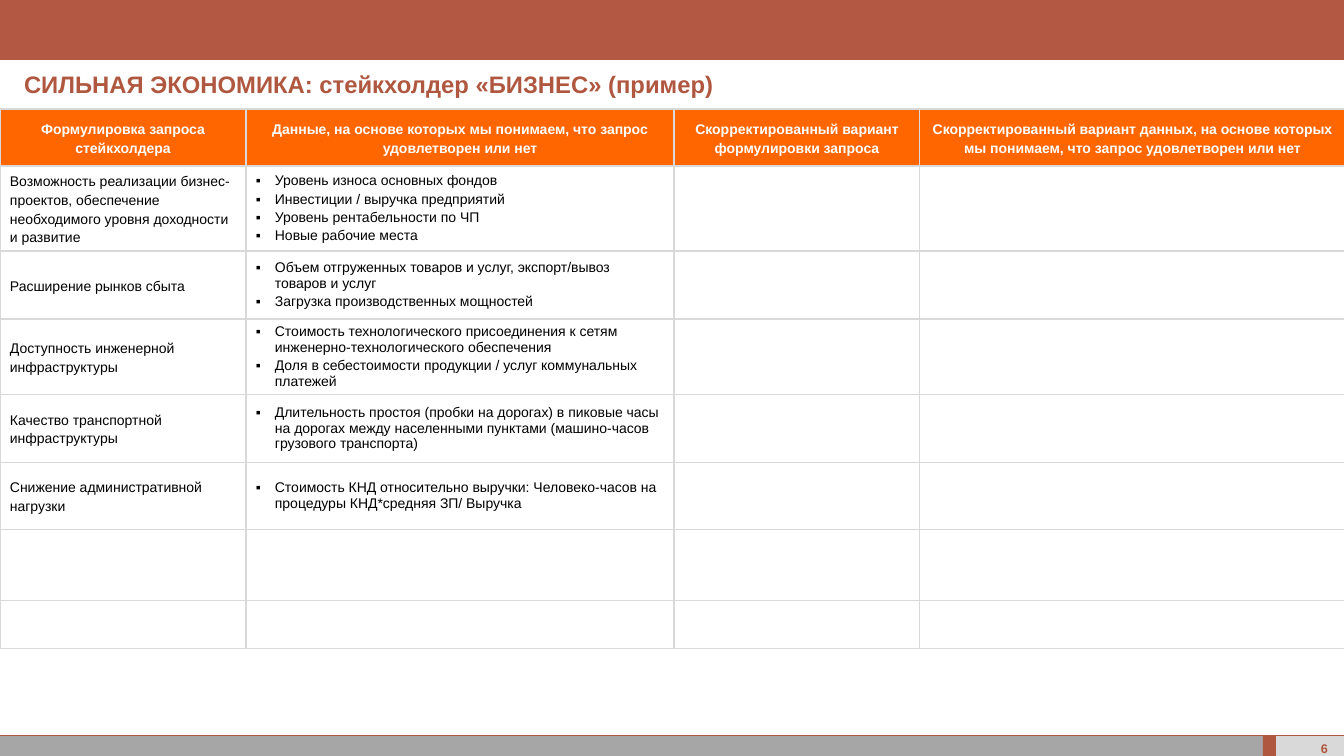
from lxml import etree
from pptx import Presentation
from pptx import util as u
from pptx.dml.color import RGBColor
from pptx.enum import shapes, text
from pptx.oxml import parse_xml
from pptx.oxml.ns import nsdecls, qn

PX = 914400 / 100.8
theme = dict(
    font="Arial", brick="B05740", band="B25843", orange="FF6600", gray="A6A6A6",
    light="D9D9D9", white="FFFFFF", black="000000", title=17, cell=10, page=9,
)


def px(n):
    return u.Emu(round(n * PX))


def style(par, size, color, bold=False, align=text.PP_ALIGN.LEFT, line=1.2, after=6):
    par.alignment, par.line_spacing, par.space_after = align, line, u.Pt(after)
    par.space_before = u.Pt(0)
    for run in par.runs:
        run.font.name, run.font.size, run.font.bold = theme["font"], u.Pt(theme[size]), bold
        run.font.color.rgb = RGBColor.from_string(theme[color])


deck = Presentation()
deck.slide_width, deck.slide_height = px(1344), px(756)
slide = deck.slides.add_slide(deck.slide_layouts[5])

# Bands at the top and bottom
bands = [
    (0, 735, 1263, 21, "gray"),
    (1276, 735, 68, 21, "light"),
    (1263, 735, 13, 21, "brick"),
    (0, 0, 1344, 60, "band"),
]
for x, y, w, h, color in bands:
    band = slide.shapes.add_shape(shapes.MSO_SHAPE.RECTANGLE, px(x), px(y), px(w), px(h))
    band.shadow.inherit = False
    band.fill.solid()
    band.fill.fore_color.rgb = RGBColor.from_string(theme[color])
    band.line.fill.background()

# Thin rules
for y in (735, 108):
    rule = slide.shapes.add_connector(shapes.MSO_CONNECTOR.STRAIGHT, 0, px(y), px(1344), px(y))
    rule.line.color.rgb = RGBColor.from_string(theme["brick"])
    rule.line.width = u.Pt(0.5)
    etree.SubElement(rule.element.spPr, qn("a:effectLst"))

# Title and page number
title = slide.shapes.title
title.left, title.top, title.width, title.height = 0, px(60), px(1344), px(48)
page = slide.shapes.add_textbox(px(1286), px(738), px(58), px(16))
labels = [
    (title, "СИЛЬНАЯ ЭКОНОМИКА: стейкхолдер «БИЗНЕС» (пример)", "title",
     text.PP_ALIGN.JUSTIFY, (24, 4, 16, 8)),
    (page, "6", "page", text.PP_ALIGN.RIGHT, (12, 0, 16, 0)),
]
for box, words, size, align, inset in labels:
    frame = box.text_frame
    frame.text = words
    frame.word_wrap, frame.auto_size = True, text.MSO_AUTO_SIZE.NONE
    frame.vertical_anchor = text.MSO_ANCHOR.TOP
    (frame.margin_left, frame.margin_top,
     frame.margin_right, frame.margin_bottom) = map(px, inset)
    style(frame.paragraphs[0], size, "brick", True, align, after=8)

# Table text
heads = [
    "Формулировка запроса стейкхолдера",
    "Данные, на основе которых мы понимаем, что запрос удовлетворен или нет",
    "Скорректированный вариант формулировки запроса",
    "Скорректированный вариант данных, на основе которых мы понимаем, "
    "что запрос удовлетворен или нет",
]
needs = [
    ("Возможность реализации бизнес-проектов, обеспечение необходимого уровня "
     "доходности и развитие",
     ["Уровень износа основных фондов", "Инвестиции / выручка предприятий",
      "Уровень рентабельности по ЧП", "Новые рабочие места"]),
    ("Расширение рынков сбыта",
     ["Объем отгруженных товаров и услуг, экспорт/вывоз товаров и услуг",
      "Загрузка производственных мощностей"]),
    ("Доступность инженерной инфраструктуры",
     ["Стоимость технологического присоединения к сетям "
      "инженерно-технологического обеспечения",
      "Доля в себестоимости продукции / услуг коммунальных платежей"]),
    ("Качество транспортной инфраструктуры",
     ["Длительность простоя (пробки на дорогах) в пиковые часы на дорогах между "
      "населенными пунктами (машино-часов грузового транспорта)"]),
    ("Снижение административной нагрузки",
     ["Стоимость КНД относительно выручки: Человеко-часов на процедуры "
      "КНД*средняя ЗП/ Выручка"]),
]
cols = [246, 428, 246, 425]
rows = [57, 85, 68, 75, 68, 67, 71, 48]

# Table grid
grid = slide.shapes.add_table(
    len(rows), len(cols), 0, px(109), px(sum(cols)), px(sum(rows))).table
grid.first_row = grid.horz_banding = False
for col, w in zip(grid.columns, cols):
    col.width = px(w)
for row, h in zip(grid.rows, rows):
    row.height = px(h)
for cell in grid.iter_cells():
    cell.vertical_anchor = text.MSO_ANCHOR.MIDDLE
    cell.margin_left = cell.margin_right = px(10)
    cell.margin_top = cell.margin_bottom = px(5)
    props = cell._tc.get_or_add_tcPr()
    for side in "LRTB":
        props.append(parse_xml(
            f'<a:ln{side} {nsdecls("a")} w="12700"><a:solidFill>'
            f'<a:srgbClr val="{theme["light"]}"/></a:solidFill></a:ln{side}>'))
    cell.fill.background()

# Header row
for c, words in enumerate(heads):
    cell = grid.cell(0, c)
    cell.text = words
    cell.margin_top = cell.margin_bottom = px(9)
    cell.fill.solid()
    cell.fill.fore_color.rgb = RGBColor.from_string(theme["orange"])
    style(cell.text_frame.paragraphs[0], "cell", "white", True, text.PP_ALIGN.CENTER)

# Requests and their measures
for r, (need, facts) in enumerate(needs, 1):
    cell = grid.cell(r, 0)
    cell.text = need
    style(cell.text_frame.paragraphs[0], "cell", "black")
    cell = grid.cell(r, 1)
    cell.text = "\n".join(facts)
    for par in cell.text_frame.paragraphs:
        props = par._p.get_or_add_pPr()
        props.set("marL", str(px(19)))
        props.set("indent", str(-px(19)))
        etree.SubElement(props, qn("a:buFont"), typeface=theme["font"])
        etree.SubElement(props, qn("a:buChar"), char="▪")
        style(par, "cell", "black", line=1.0, after=2)

deck.save("out.pptx")
